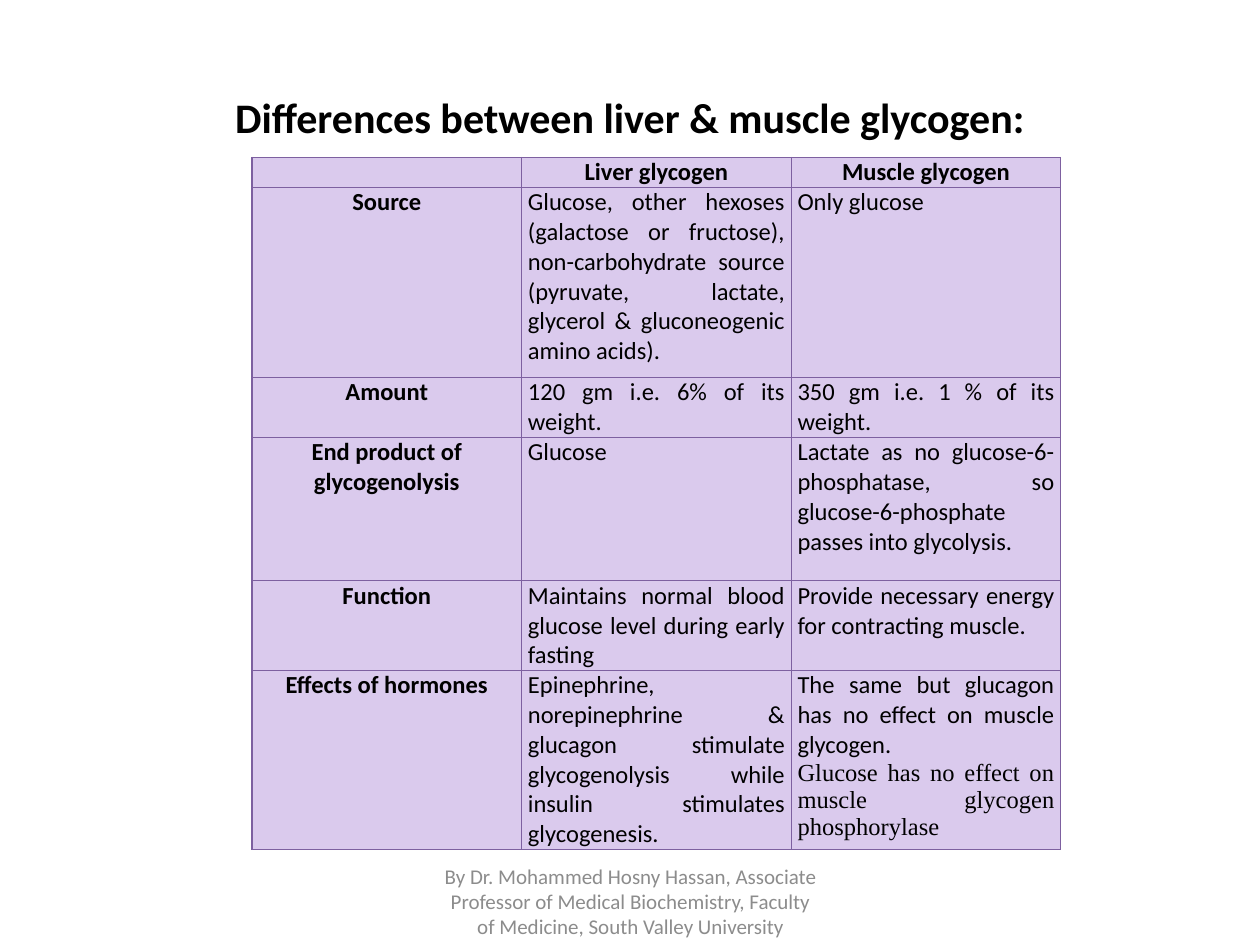
"""Build the slide comparing liver and muscle glycogen."""
from lxml import etree
from pptx import Presentation
from pptx.dml.color import RGBColor
from pptx.enum.text import MSO_ANCHOR, PP_ALIGN
from pptx.oxml.ns import qn
from pptx.util import Inches, Pt

CENTER, JUSTIFY = PP_ALIGN.CENTER, PP_ALIGN.JUSTIFY
MIDDLE = MSO_ANCHOR.MIDDLE
FONT, ALT_FONT = "Calibri", "Times New Roman"
COLORS = {"text": "000000", "footer": "8C8C8C", "cell": "DACAED", "border": "7D60A0"}

TITLE = "Differences between liver & muscle glycogen:"
FOOTER = ("By Dr. Mohammed Hosny Hassan, Associate Professor of Medical Biochemistry, "
          "Faculty of Medicine, South Valley University")
ROWS = [
    ("", "Liver glycogen", "Muscle glycogen"),
    ("Source",
     "Glucose, other hexoses (galactose or fructose), non-carbohydrate source "
     "(pyruvate, lactate, glycerol & gluconeogenic amino acids).",
     "Only glucose"),
    ("Amount", "120 gm i.e. 6% of its weight.", "350 gm i.e. 1 % of its weight."),
    ("End product of glycogenolysis", "Glucose",
     "Lactate as no glucose-6-phosphatase, so glucose-6-phosphate passes into glycolysis."),
    ("Function", "Maintains normal blood glucose level during early fasting",
     "Provide necessary energy for contracting muscle."),
    ("Effects of hormones",
     "Epinephrine, norepinephrine & glucagon stimulate glycogenolysis while insulin "
     "stimulates glycogenesis.",
     "The same but glucagon has no effect on muscle glycogen.\n"
     "Glucose has no effect on muscle glycogen phosphorylase"),
]
ROW_HEIGHTS = [0.23, 1.51, 0.46, 1.14, 0.69, 1.38]
COL_WIDTH = 2.14


def style(p, size, align, color="text", bold=False, font=FONT):
    p.alignment = align
    p.font.size, p.font.bold, p.font.name = Pt(size), bold, font
    p.font.color.rgb = RGBColor.from_string(COLORS[color])


def place(sp, left, top, width, height):
    sp.left, sp.top = Inches(left), Inches(top)
    sp.width, sp.height = Inches(width), Inches(height)


def add_borders(cell):
    tc_pr = cell._tc.get_or_add_tcPr()
    for side in "LRTB":
        ln = etree.SubElement(tc_pr, qn(f"a:ln{side}"), w=str(Pt(0.75)))
        fill = etree.SubElement(ln, qn("a:solidFill"))
        etree.SubElement(fill, qn("a:srgbClr"), val=COLORS["border"])


def fill_cell(cell, text, is_head):
    cell.margin_left = cell.margin_right = Inches(0.05)
    cell.margin_top = cell.margin_bottom = 0
    add_borders(cell)
    cell.fill.solid()
    cell.fill.fore_color.rgb = RGBColor.from_string(COLORS["cell"])
    cell.text = text
    for i, p in enumerate(cell.text_frame.paragraphs):
        style(p, 14, CENTER if is_head else JUSTIFY, bold=is_head,
              font=ALT_FONT if i else FONT)


def main():
    prs = Presentation()
    prs.slide_width, prs.slide_height = Inches(10), Inches(7.5)
    s = prs.slides.add_slide(prs.slide_layouts[5])

    title = s.shapes.title
    place(title, 0.5, 0.3, 9, 1.25)
    title.text_frame.text = TITLE
    title.text_frame.vertical_anchor = MIDDLE
    style(title.text_frame.paragraphs[0], 24, CENTER, bold=True)

    cols = len(ROWS[0])
    table = s.shapes.add_table(len(ROWS), cols, Inches(2), Inches(1.25),
                               Inches(COL_WIDTH * cols), Inches(sum(ROW_HEIGHTS))).table
    table.first_row = table.horz_banding = False
    for col in table.columns:
        col.width = Inches(COL_WIDTH)
    for r, (row, height) in enumerate(zip(ROWS, ROW_HEIGHTS)):
        table.rows[r].height = Inches(height)
        for c, text in enumerate(row):
            fill_cell(table.cell(r, c), text, r == 0 or c == 0)

    footer = s.shapes.add_textbox(Inches(3.42), Inches(6.95), Inches(3.17), Inches(0.4))
    tf = footer.text_frame
    tf.word_wrap = True
    tf.vertical_anchor = MIDDLE
    tf.text = FOOTER
    style(tf.paragraphs[0], 12, CENTER, "footer")

    prs.save("out.pptx")


if __name__ == "__main__":
    main()
